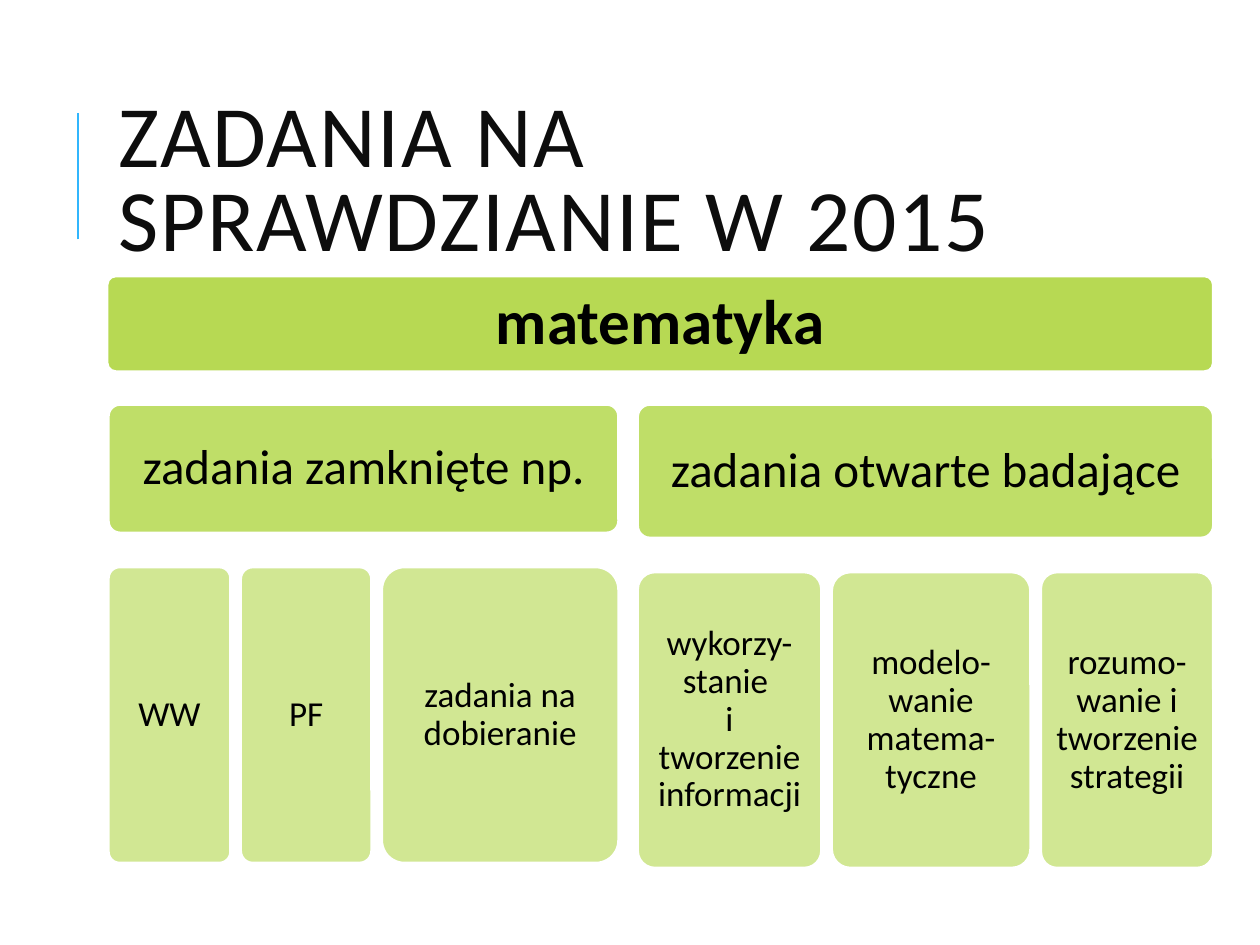
from pptx import Presentation
from pptx.dml.color import RGBColor
from pptx.enum.shapes import MSO_CONNECTOR, MSO_SHAPE
from pptx.enum.text import MSO_ANCHOR, PP_ALIGN
from pptx.oxml.ns import qn
from pptx.util import Inches, Pt
from lxml.etree import SubElement

GREEN = RGBColor(0xA5, 0xD0, 0x28)
BLUE = RGBColor(0x31, 0xB6, 0xFD)
WHITE = RGBColor(0xFF, 0xFF, 0xFF)
BLACK = RGBColor(0, 0, 0)
INK = RGBColor(0x0D, 0x0D, 0x0D)
FONT = "Calibri"

deck = Presentation()
deck.slide_width, deck.slide_height = Inches(10), Inches(7.5)
page = deck.slides.add_slide(deck.slide_layouts[6])

# Grid of 100 columns by 75 rows
COLUMN = deck.slide_width / 100
ROW = deck.slide_height / 75
GAP = 0.6  # columns between neighbouring leaves
LEVEL_GAP = 2.5  # rows between a branch and its leaves


def place(left, top, width, height):
    return int(left * COLUMN), int(top * ROW), int(width * COLUMN), int(height * ROW)


def add_tile(left, top, width, height, text, size, inset, opacity, bold=False):
    tile = page.shapes.add_shape(MSO_SHAPE.ROUNDED_RECTANGLE, *place(left, top, width, height))
    tile.adjustments[0] = 0.1
    tile.shadow.inherit = False
    tile.fill.solid()
    tile.fill.fore_color.rgb = GREEN
    color = tile.fill._xPr.find(qn("a:solidFill"))[0]
    SubElement(color, qn("a:alpha")).set("val", str(opacity * 1000))
    tile.line.color.rgb = WHITE
    tile.line.width = Pt(3)
    frame = tile.text_frame
    frame.word_wrap = True
    frame.vertical_anchor = MSO_ANCHOR.MIDDLE
    frame.margin_left = frame.margin_right = Inches(inset)
    frame.margin_top = frame.margin_bottom = Inches(inset)
    frame.text = text
    para = frame.paragraphs[0]
    para.alignment = PP_ALIGN.CENTER
    para.line_spacing = 0.9
    for span in para.runs:
        span.font.name, span.font.size, span.font.bold = FONT, Pt(size), bold
        span.font.color.rgb = BLACK


# Accent line beside the title
accent = page.shapes.add_connector(
    MSO_CONNECTOR.STRAIGHT, int(6.2 * COLUMN), int(19 * ROW), int(6.2 * COLUMN), int(9 * ROW))
accent.line.color.rgb = BLUE
accent.line.width = Pt(1.5)
SubElement(accent._element.spPr, qn("a:effectLst"))

# Title
title = page.shapes.add_textbox(*place(8.4, 6.4, 79.7, 16.4))
title.text_frame.word_wrap = True
title.text_frame.vertical_anchor = MSO_ANCHOR.MIDDLE
title.text_frame.text = "ZADANIA NA SPRAWDZIANIE W 2015"
para = title.text_frame.paragraphs[0]
para.line_spacing = 0.8
span = para.runs[0]
span.font.name, span.font.size = FONT, Pt(50)
span.font.color.rgb = INK
span.font._element.set("spc", "100")

# Root of the hierarchy
add_tile(8.4, 21.8, 88, 7.8, "matematyka", 36, 0.15, 80, bold=True)

# Branches: left, height, text, leaves (width, text)
branches = [
    (8.5, 10.4, "zadania zamknięte np.", [
        (9.9, "WW"),
        (10.6, "PF"),
        (19, "zadania na dobieranie")]),
    (50.5, 10.8, "zadania otwarte badające", [
        (14.8, "wykorzy-\vstanie \vi tworzenie informacji"),
        (16, "modelo-\vwanie matema-\vtyczne"),
        (13.9, "rozumo-\vwanie i tworzenie strategii")]),
]
BRANCH_TOP, LEAF_HEIGHT = 32, 23.7
for left, height, text, leaves in branches:
    width = sum(leaf[0] for leaf in leaves) + GAP * (len(leaves) - 1)
    add_tile(left, BRANCH_TOP, width, height, text, 28, 0.12, 70)
    for leaf_width, leaf_text in leaves:
        add_tile(left, BRANCH_TOP + height + LEVEL_GAP, leaf_width, LEAF_HEIGHT,
                 leaf_text, 20, 0.08, 50)
        left += leaf_width + GAP

deck.save("out.pptx")
